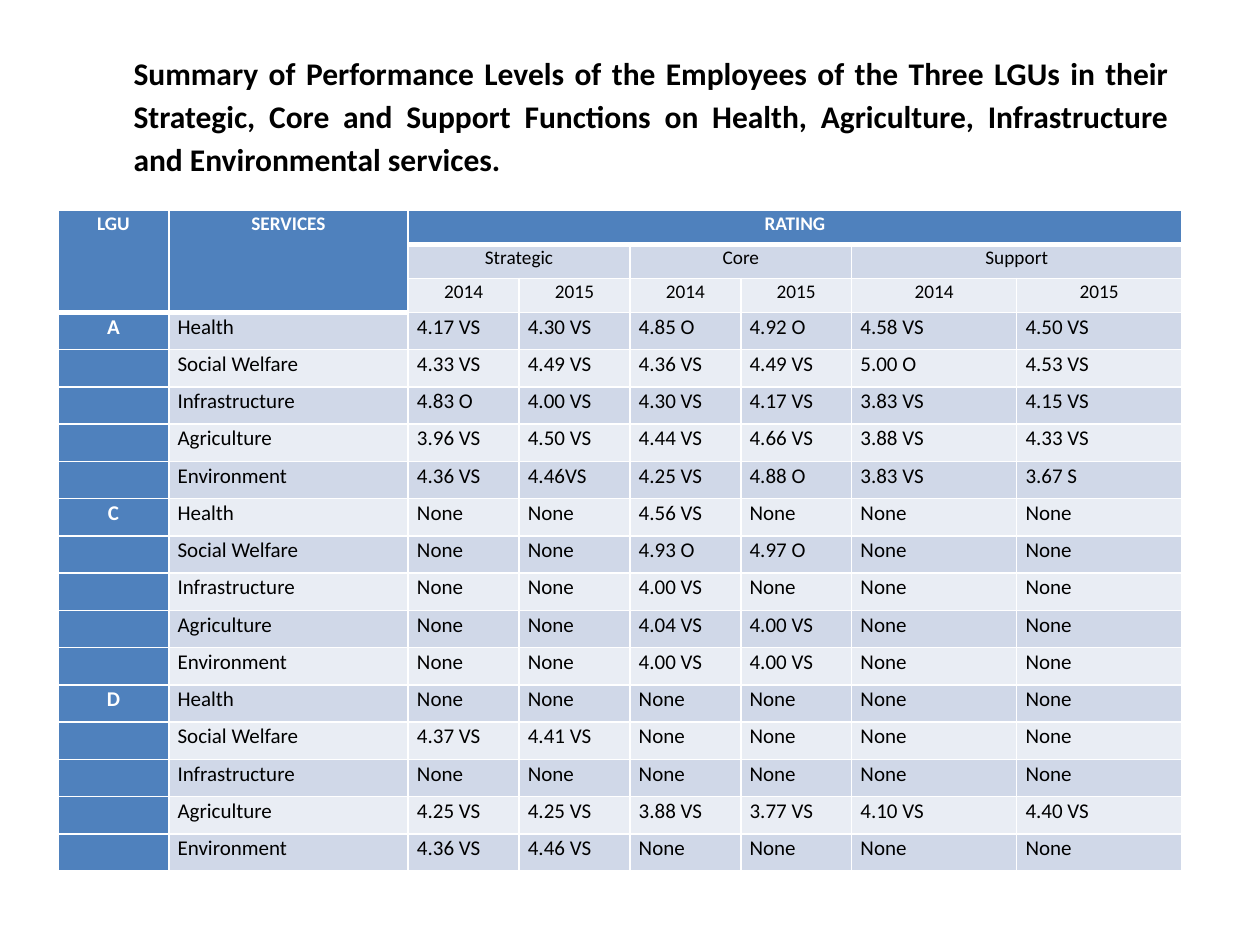
"""Builds a slide with a table of performance ratings by LGU and service."""
from lxml.etree import SubElement as Sub
from pptx import Presentation
from pptx.dml.color import RGBColor
from pptx.enum.text import MSO_ANCHOR as Anchor, MSO_AUTO_SIZE as Fit, PP_ALIGN as Align
from pptx.oxml.ns import qn
from pptx.util import Inches, Pt

TITLE = (
    "Summary of Performance Levels of the Employees of the Three LGUs in their "
    "Strategic, Core and Support Functions on Health, Agriculture, "
    "Infrastructure and Environmental services."
)
KINDS = ["Strategic", "Core", "Support"]
YEARS = ["2014", "2015"]
AREAS = ["Health", "Social Welfare", "Infrastructure", "Agriculture", "Environment"]
NONE = ["None"] * 6
RATES = {
    "A": [
        ["4.17 VS", "4.30 VS", "4.85 O", "4.92 O", "4.58 VS", "4.50 VS"],
        ["4.33 VS", "4.49 VS", "4.36 VS", "4.49 VS", "5.00 O", "4.53 VS"],
        ["4.83 O", "4.00 VS", "4.30 VS", "4.17 VS", "3.83 VS", "4.15 VS"],
        ["3.96 VS", "4.50 VS", "4.44 VS", "4.66 VS", "3.88 VS", "4.33 VS"],
        ["4.36 VS", "4.46VS", "4.25 VS", "4.88 O", "3.83 VS", "3.67 S"],
    ],
    "C": [
        ["None", "None", "4.56 VS", "None", "None", "None"],
        ["None", "None", "4.93 O", "4.97 O", "None", "None"],
        ["None", "None", "4.00 VS", "None", "None", "None"],
        ["None", "None", "4.04 VS", "4.00 VS", "None", "None"],
        ["None", "None", "4.00 VS", "4.00 VS", "None", "None"],
    ],
    "D": [
        NONE,
        ["4.37 VS", "4.41 VS", "None", "None", "None", "None"],
        NONE,
        ["4.25 VS", "4.25 VS", "3.88 VS", "3.77 VS", "4.10 VS", "4.40 VS"],
        ["4.36 VS", "4.46 VS", "None", "None", "None", "None"],
    ],
}
BLUE, DARK, PALE, WHITE, BLACK = "4F81BD", "D0D8E8", "E9EDF4", "FFFFFF", "000000"
LEFT, WIDE, TOP, HIGH = 0.46, 8.92, 1.67, 5.25
COLS = [0.88, 1.9] + [0.88] * 4 + [1.31] * 2
HEAD, HEAD_H = 3, 0.27


def color(code):
    return RGBColor.from_string(code)


def write(frame, text, size=12, ink=BLACK, bold=False, align=Align.LEFT, space=1.07, after=0):
    par = frame.paragraphs[0]
    par.alignment, par.line_spacing = align, space
    par.space_before, par.space_after = Pt(0), Pt(after)
    if not text:
        Sub(par._p, qn("a:endParaRPr"), sz=str(size * 100))
        return par
    run = par.add_run()
    run.text = text
    font = run.font
    font.name, font.size, font.bold = "Calibri", Pt(size), bold
    font.color.rgb = color(ink)
    return par


def edge(cell, side, width):
    line = Sub(cell._tc.get_or_add_tcPr(), qn("a:ln" + side), w=str(Pt(width)))
    fill = Sub(line, qn("a:solidFill"))
    Sub(fill, qn("a:srgbClr"), val=WHITE)


def thick(row, col):
    return (row == 1 and col > 1) or (row == HEAD and col < 2)


def style(cell, row, col, text):
    blue = row == 0 or col == 0 or (row < HEAD and col == 1)
    for side in "LR":
        edge(cell, side, 1)
    edge(cell, "T", 3 if thick(row, col) else 1)
    last = HEAD - 1 if row < HEAD and col < 2 else row
    edge(cell, "B", 3 if thick(last + 1, col) else 1)
    cell.fill.solid()
    cell.fill.fore_color.rgb = color(BLUE if blue else DARK if row % 2 else PALE)
    cell.margin_left = cell.margin_right = Inches(0.07)
    cell.margin_top = cell.margin_bottom = 0
    mid = row < HEAD or col == 0
    write(cell.text_frame, text, size=11 if row < HEAD else 12,
          ink=WHITE if blue else BLACK, bold=blue,
          align=Align.CENTER if mid else Align.LEFT)


def grid():
    rows = [["LGU", "SERVICES", "RATING"] + [""] * 5,
            ["", ""] + [text for kind in KINDS for text in (kind, "")],
            ["", ""] + YEARS * len(KINDS)]
    for unit, lines in RATES.items():
        for num, (area, rates) in enumerate(zip(AREAS, lines)):
            rows.append([unit if num == 0 else "", area] + rates)
    return rows


def add_title(slide):
    title = slide.shapes.title
    title.left, title.top = Inches(LEFT), Inches(0.33)
    title.width, title.height = Inches(WIDE), Inches(1.15)
    frame = title.text_frame
    frame.word_wrap, frame.auto_size = True, Fit.NONE
    frame.vertical_anchor = Anchor.TOP
    par = write(frame, TITLE, size=18, bold=True, align=Align.JUSTIFY, space=1.15, after=10)
    props = par._p.get_or_add_pPr()
    props.set("marL", str(Inches(0.5)))
    props.set("indent", "0")


def add_rates(slide):
    rows = grid()
    table = slide.shapes.add_table(len(rows), len(COLS), Inches(LEFT), Inches(TOP),
                                   Inches(WIDE), Inches(HIGH)).table
    for col, width in zip(table.columns, COLS):
        col.width = Inches(width)
    body = (HIGH - HEAD * HEAD_H) / (len(rows) - HEAD)
    for num, texts in enumerate(rows):
        table.rows[num].height = Inches(HEAD_H if num < HEAD else body)
        for col, text in enumerate(texts):
            style(table.cell(num, col), num, col, text)
    spans = [(0, 0, 2, 0), (0, 1, 2, 1), (0, 2, 0, 7)]
    spans += [(1, col, 1, col + 1) for col in range(2, len(COLS), 2)]
    for top, left, low, right in spans:
        table.cell(top, left).merge(table.cell(low, right))


def main():
    deck = Presentation()
    deck.slide_width, deck.slide_height = Inches(10), Inches(7.5)
    slide = deck.slides.add_slide(deck.slide_layouts[5])
    add_title(slide)
    add_rates(slide)
    deck.save("out.pptx")


if __name__ == "__main__":
    main()
